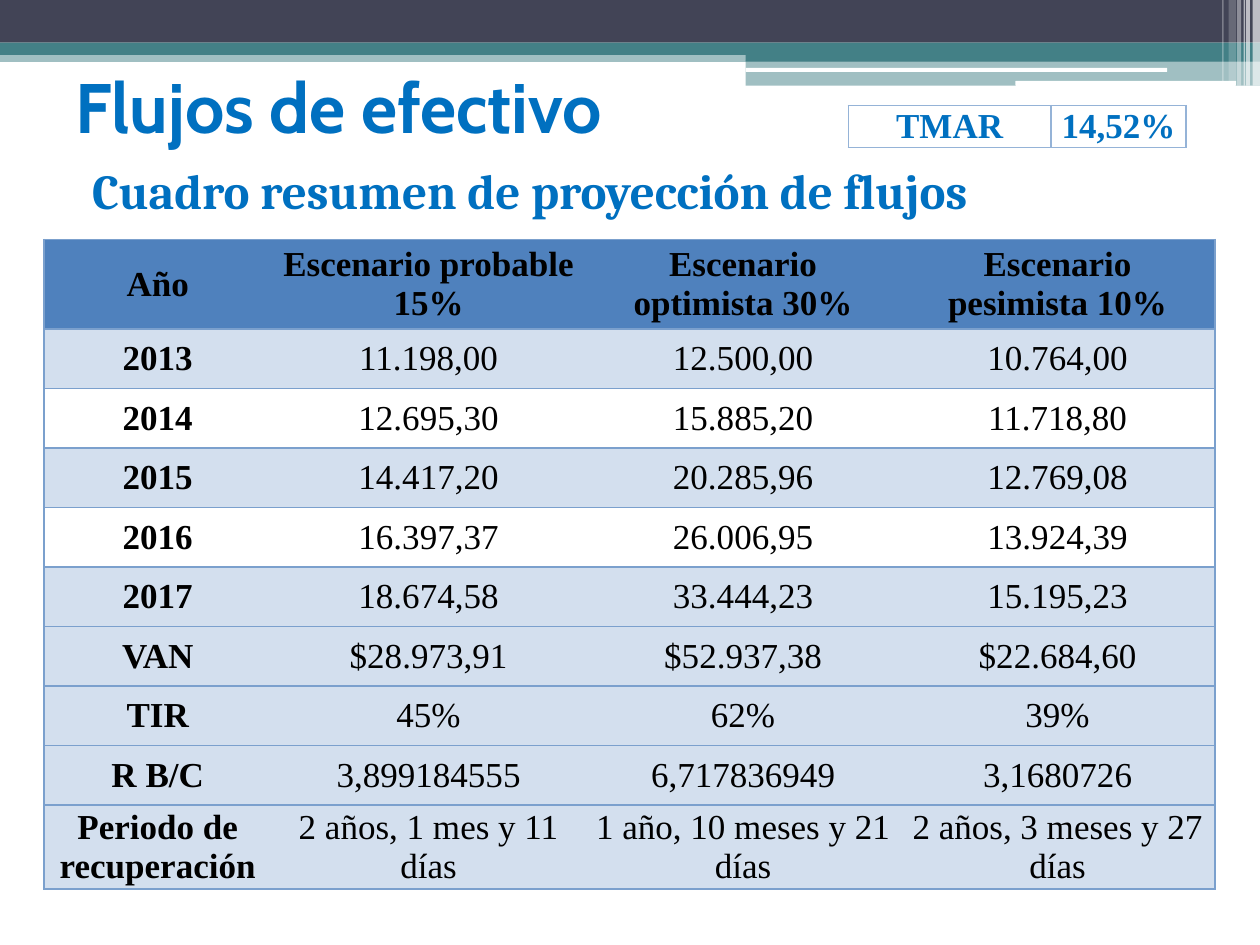
from dataclasses import dataclass

from lxml.etree import SubElement
from pptx import Presentation
from pptx.dml.color import RGBColor
from pptx.enum.shapes import MSO_SHAPE as Shape
from pptx.enum.text import MSO_ANCHOR as Anchor, PP_ALIGN as Align
from pptx.oxml.ns import qn
from pptx.util import Cm, Pt


@dataclass(frozen=True)
class Theme:
    slate: str = "424456"
    teal: str = "438086"
    white: str = "FFFFFF"
    accent: str = "0070C0"
    ink: str = "000000"
    header: str = "4F81BD"
    band: str = "D3DFEE"
    rule: str = "7BA0CD"
    rate_rule: str = "95B3D7"
    title_font: str = "Cabin"
    subtitle_font: str = "Cambria"
    table_font: str = "Times New Roman"
    title_size: int = 40
    subtitle_size: int = 28
    table_size: int = 20


@dataclass(frozen=True)
class Box:
    """A region of the slide, in centimetres."""
    left: float
    top: float
    width: float
    height: float

    def inner(self, left, top, width, height):
        return Box(self.left + left, self.top + top, width, height)

    def lengths(self):
        return [Cm(v) for v in (self.left, self.top, self.width, self.height)]


THEME = Theme()
SCENARIOS = [
    ("Año", "Escenario probable 15%", "Escenario optimista 30%", "Escenario pesimista 10%"),
    ("2013", "11.198,00", "12.500,00", "10.764,00"),
    ("2014", "12.695,30", "15.885,20", "11.718,80"),
    ("2015", "14.417,20", "20.285,96", "12.769,08"),
    ("2016", "16.397,37", "26.006,95", "13.924,39"),
    ("2017", "18.674,58", "33.444,23", "15.195,23"),
    ("VAN", "$28.973,91", "$52.937,38", "$22.684,60"),
    ("TIR", "45%", "62%", "39%"),
    ("R B/C", "3,899184555", "6,717836949", "3,1680726"),
    ("Periodo de recuperación", "2 años, 1 mes y 11 días",
     "1 año, 10 meses y 21 días", "2 años, 3 meses y 27 días"),
]
UNSHADED_YEARS = ("2014", "2016")


def apply(target, formats):
    for name, value in formats.items():
        setattr(target, name, value)


def write(frame, text, font, size, color, bold=True):
    paragraph = frame.paragraphs[0]
    run = paragraph.add_run()
    run.text = text
    apply(run.font, {"name": font, "size": Pt(size), "bold": bold})
    run.font.color.rgb = RGBColor.from_string(color)
    return paragraph


def add_bar(slide, box, color, opacity=100, kind=Shape.RECTANGLE):
    bar = slide.shapes.add_shape(kind, *box.lengths())
    bar.shadow.inherit = False
    bar.line.fill.background()
    bar.fill.solid()
    bar.fill.fore_color.rgb = RGBColor.from_string(color)
    if opacity < 100:
        tint = bar.element.spPr.find(qn("a:solidFill"))[0]
        SubElement(tint, qn("a:alpha"), val=str(opacity * 1000))


def add_banner(slide, box):
    ribbon = box.inner(15.03, 0, 10.37, box.height)
    add_bar(slide, box.inner(0, 1.02, box.width, 0.23), THEME.teal, 50)
    add_bar(slide, box.inner(0, 0, box.width, 0.86), THEME.slate)
    add_bar(slide, box.inner(0, 0.86, box.width, 0.25), THEME.teal)
    add_bar(slide, ribbon.inner(0, 0.99, ribbon.width, 0.25), THEME.teal)
    add_bar(slide, ribbon.inner(0, 1.22, ribbon.width, 0.51), THEME.teal, 50)
    for left, top, width, height in ((0, 1.37, 8.5, 0.08), (5.44, 1.63, 4.45, 0.1)):
        add_bar(slide, ribbon.inner(left, top, width, height), THEME.white,
                kind=Shape.ROUNDED_RECTANGLE)
    for left, width, height, opacity in (
            (25.25, 0.15, 1.73, 65), (25.12, 0.08, 1.73, 65), (25.07, 0.03, 1.73, 60),
            (24.94, 0.08, 1.73, 40), (24.77, 0.15, 1.63, 20), (24.64, 0.03, 1.63, 30)):
        add_bar(slide, box.inner(left, 0, width, height), THEME.white, opacity)


def add_heading(slide, box, text, font, size, anchor):
    frame = slide.shapes.add_textbox(*box.lengths()).text_frame
    apply(frame, {"word_wrap": True, "vertical_anchor": anchor})
    return write(frame, text, font, size, THEME.accent)


def add_headings(slide, box):
    add_heading(slide, box.inner(0, 0, box.width, 2), "Flujos de efectivo",
                THEME.title_font, THEME.title_size, Anchor.MIDDLE)
    subtitle = add_heading(slide, box.inner(0.03, 2, box.width, 1.57),
                           "Cuadro resumen de proyección de flujos",
                           THEME.subtitle_font, THEME.subtitle_size, Anchor.TOP)
    subtitle.space_before = Pt(3)
    indents = subtitle._p.get_or_add_pPr()
    indents.set("marL", str(Cm(1.02)))
    indents.set("indent", str(Cm(-0.71)))


def set_borders(cell, color, sides):
    """Rule the given sides of a cell (of L, R, T, B) and clear the others."""
    properties = cell._tc.get_or_add_tcPr()
    for side in "LRTB":
        line = SubElement(properties, qn(f"a:ln{side}"), w=str(Pt(1)))
        if side in sides:
            fill = SubElement(line, qn("a:solidFill"))
            SubElement(fill, qn("a:srgbClr"), val=color)
        else:
            SubElement(line, qn("a:noFill"))


def add_grid(slide, box, widths, heights):
    """Add a table without header or band styling and return it."""
    table = slide.shapes.add_table(len(heights), len(widths), *box.lengths()).table
    apply(table, {"first_row": False, "horz_banding": False})
    for column, width in zip(table.columns, widths):
        column.width = Cm(width)
    for row, height in zip(table.rows, heights):
        row.height = Cm(height)
    return table


def fill_cell(cell, text, color, bold, rule, sides, shade=None):
    apply(cell, {"vertical_anchor": Anchor.MIDDLE, "margin_left": Cm(0.18),
                 "margin_right": Cm(0.18), "margin_top": 0, "margin_bottom": 0})
    set_borders(cell, rule, sides)
    if shade:
        cell.fill.solid()
        cell.fill.fore_color.rgb = RGBColor.from_string(shade)
    else:
        cell.fill.background()
    paragraph = write(cell.text_frame, text, THEME.table_font, THEME.table_size, color, bold)
    paragraph.alignment = Align.CENTER


def add_scenarios(slide, box):
    year_width, header_height, row_height = 4.58, 1.8, 1.2
    scenario_count = len(SCENARIOS[0]) - 1
    widths = [year_width] + [(box.width - year_width) / scenario_count] * scenario_count
    heights = [header_height] + [row_height] * (len(SCENARIOS) - 1)
    table = add_grid(slide, box, widths, heights)
    for r, record in enumerate(SCENARIOS):
        shade = THEME.header if r == 0 else THEME.band
        if record[0] in UNSHADED_YEARS:
            shade = None
        for c, text in enumerate(record):
            sides = "TB" + ("L" if c == 0 else "R" if c == scenario_count else "")
            fill_cell(table.cell(r, c), text, THEME.ink, r == 0 or c == 0,
                      THEME.rule, sides, shade)


def add_rate(slide, box):
    label_width = 4.09
    table = add_grid(slide, box, [label_width, box.width - label_width], [0.71])
    for c, text in enumerate(("TMAR", "14,52%")):
        fill_cell(table.cell(0, c), text, THEME.accent, True, THEME.rate_rule, "LRTB")


def main():
    deck = Presentation()
    apply(deck, {"slide_width": Cm(25.4), "slide_height": Cm(19.05)})
    slide = deck.slides.add_slide(deck.slide_layouts[6])
    add_banner(slide, Box(0, 0, 25.4, 1.73))
    add_headings(slide, Box(1.27, 1.12, 22.86, 3.57))
    add_scenarios(slide, Box(0.89, 4.83, 23.6, 13.08))
    add_rate(slide, Box(17.1, 2.13, 6.81, 0.84))
    deck.save("out.pptx")


if __name__ == "__main__":
    main()
